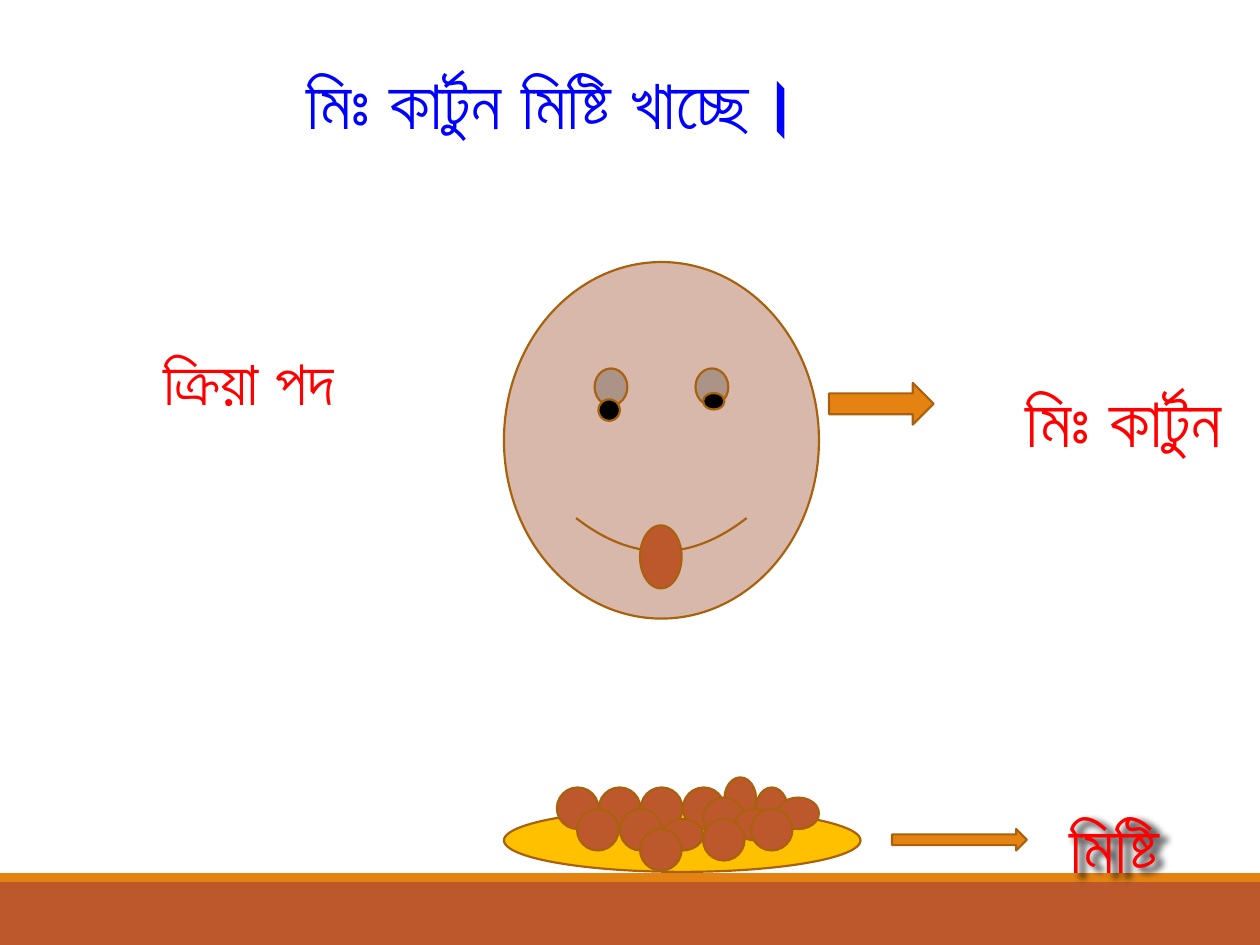
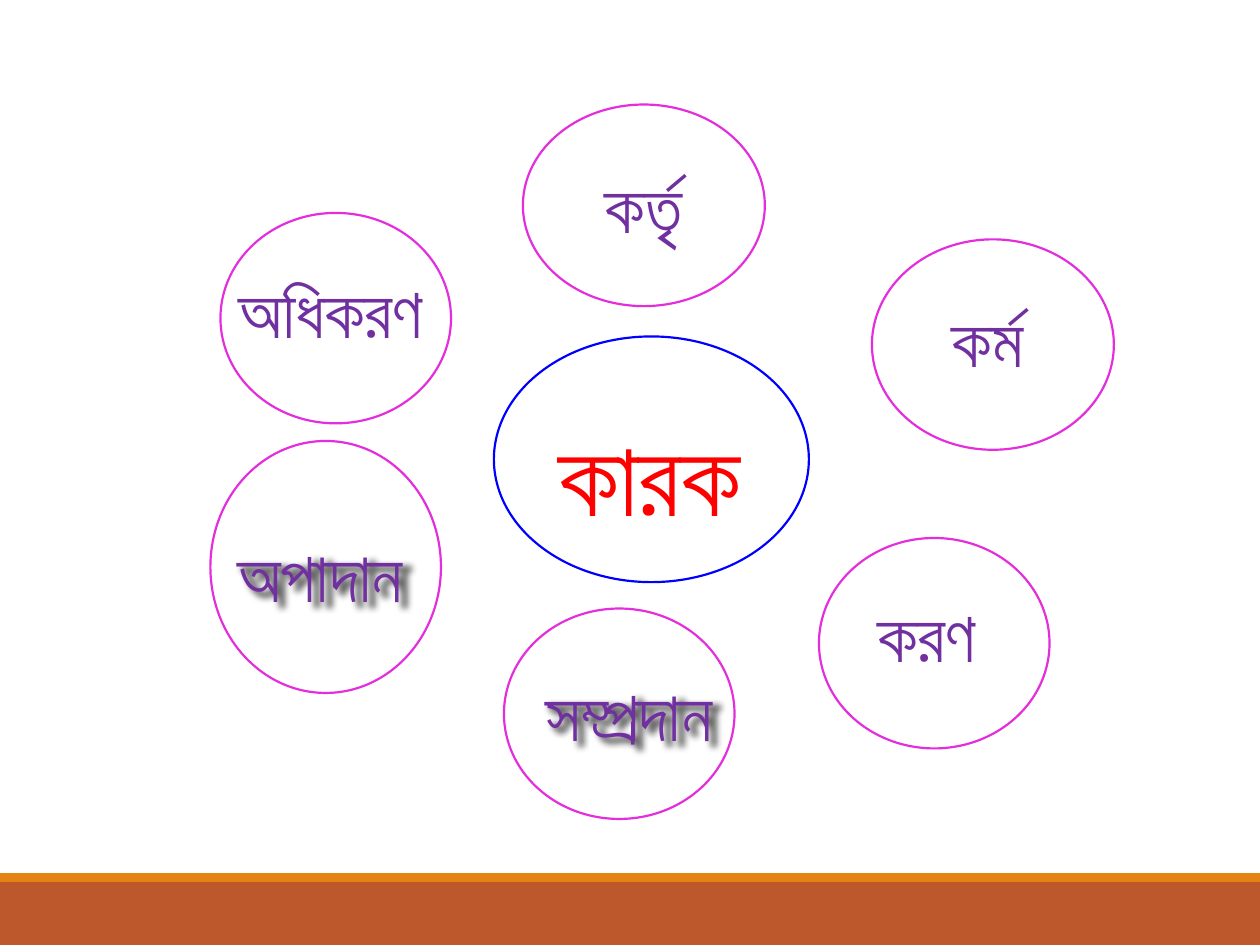
from lxml import etree
from pptx import Presentation
from pptx.dml.color import RGBColor
from pptx.enum.shapes import MSO_SHAPE as Preset
from pptx.enum.text import MSO_ANCHOR, MSO_AUTO_SIZE, PP_ALIGN
from pptx.oxml.ns import qn
from pptx.util import Inches, Pt

RUST = RGBColor(0xBD, 0x58, 0x2C)
ORANGE = RGBColor(0xE4, 0x83, 0x12)
BROWN = RGBColor(0xA9, 0x61, 0x0D)
SKIN = RGBColor(0xD7, 0xB8, 0xAB)
GOLD = RGBColor(0xFF, 0xC0, 0x00)
BLACK = RGBColor(0x00, 0x00, 0x00)
RED = RGBColor(0xFF, 0x00, 0x00)
BLUE = RGBColor(0x00, 0x00, 0xFF)
PURPLE = RGBColor(0x70, 0x30, 0xA0)
PINK = RGBColor(0xE4, 0x2E, 0xDB)

FONT = "Calibri"
LABEL_SIZE = 40

# Bands at the foot of every slide: (left, top, width, height), fill
BANDS = [((0, 7, 10, 0.5), RUST), ((0, 6.93, 10, 0.07), ORANGE)]

# Slide 1: the sentence and its parts
SENTENCE = "মিঃ কার্টুন মিষ্টি খাচ্ছে।"
SENTENCE_AT = (2.33, 0.42, 4.25, 0.77)
FACE = [
    (Preset.SMILEY_FACE, (4, 2.08, 2.5, 2.83), SKIN),
    (Preset.OVAL, (5.08, 4.17, 0.33, 0.5), RUST),
    (Preset.OVAL, (4.75, 3.17, 0.17, 0.17), BLACK),
    (Preset.OVAL, (5.58, 3.12, 0.17, 0.13), BLACK),
]
ARROWS = [(6.58, 3.04, 0.83, 0.33), (7.08, 6.58, 1.07, 0.17)]
PLATE = (4, 6.42, 2.83, 0.5)
SWEET = 0.33
BACK_ROW = [(4.42 + i / 3, 6.25, SWEET, SWEET) for i in range(4)]
HEAP = [
    (5.75, 6.17, 0.25, SWEET), (6, 6.25, 0.25, SWEET),
    (4.92, 6.42, SWEET, SWEET), (5.25, 6.5, SWEET, 0.25),
    (5.58, 6.33, SWEET, SWEET), (5.83, 6.42, SWEET, 0.25),
    (6.17, 6.33, SWEET, 0.25), (5.08, 6.58, SWEET, SWEET),
    (5.96, 6.42, SWEET, SWEET), (5.58, 6.5, SWEET, SWEET),
    (4.58, 6.42, SWEET, SWEET),
]
SUBJECT, SUBJECT_AT = "মিঃ কার্টুন", (7.92, 2.5, 2, 1.31)
OBJECT, OBJECT_AT = "মিষ্টি ", (8.17, 6.33, 1.5, 0.77)
VERB, VERB_AT = "ক্রিয়া পদ ", (0.83, 2.67, 2.42, 0.71)

# Slide 2: word, text box, ring, shadowed, wrapped
CENTRE = ("কারক", (4.27, 3.22, 1.77, 1.11), (3.92, 2.67, 2.5, 1.95))
CASES = [
    ("অধিকরণ", (1.75, 2.08, 1.75, 0.77), (1.75, 1.69, 1.83, 1.67), False, True),
    ("কর্তৃ", (4.68, 1.25, 0.85, 0.77), (4.15, 0.83, 1.92, 1.6), False, False),
    ("কর্ম", (7.42, 2.31, 0.83, 0.77), (6.92, 1.9, 1.92, 1.67), False, False),
    ("করণ", (6.84, 4.65, 1.03, 0.77), (6.5, 4.27, 1.83, 1.67), False, False),
    ("সম্প্রদান", (4.18, 5.28, 1.62, 0.77), (4, 4.83, 1.83, 1.67), True, False),
    ("অপাদান", (1.75, 4.18, 1.58, 0.65), (1.67, 3.5, 1.83, 2), True, False),
]


def inches(place):
    return [Inches(length) for length in place]


def add_figure(page, preset, place, fill=None, line=BROWN):
    figure = page.shapes.add_shape(preset, *inches(place))
    figure.shadow.inherit = False
    if fill is None:
        figure.fill.background()
    else:
        figure.fill.solid()
        figure.fill.fore_color.rgb = fill
    if line is None:
        figure.line.fill.background()
    else:
        figure.line.color.rgb = line
        figure.line.width = Pt(1.25)


def style_font(font, color, size):
    font.name, font.size, font.bold = FONT, Pt(size), True
    font.color.rgb = color


def add_label(page, words, place, color, size=LABEL_SIZE, wrap=True):
    box = page.shapes.add_textbox(*inches(place))
    box.text_frame.word_wrap = wrap
    box.text_frame.auto_size = MSO_AUTO_SIZE.SHAPE_TO_FIT_TEXT
    para = box.text_frame.paragraphs[0]
    para.text = words
    para.alignment = PP_ALIGN.CENTER
    style_font(para.font, color, size)
    return box


def add_shadow(box):
    effects = etree.SubElement(box._element.spPr, qn("a:effectLst"))
    shadow = etree.SubElement(effects, qn("a:outerShdw"), blurRad="50800",
                              dist="50800", dir="2700000", algn="tl")
    tint = etree.SubElement(shadow, qn("a:srgbClr"), val="000000")
    etree.SubElement(tint, qn("a:alpha"), val="60000")


def add_page(deck, layout):
    page = deck.slides.add_slide(deck.slide_layouts.get_by_name(layout))
    for place, fill in BANDS:
        add_figure(page, Preset.RECTANGLE, place, fill, line=None)
    return page


def build_sentence_page(deck):
    page = add_page(deck, "Title Only")
    title = page.shapes.title
    title.left, title.top, title.width, title.height = inches(SENTENCE_AT)
    frame = title.text_frame
    frame.text = SENTENCE
    frame.word_wrap = True
    frame.vertical_anchor = MSO_ANCHOR.TOP
    frame.auto_size = MSO_AUTO_SIZE.SHAPE_TO_FIT_TEXT
    frame.paragraphs[0].alignment = PP_ALIGN.LEFT
    style_font(frame.paragraphs[0].font, BLUE, LABEL_SIZE)

    # Face, plate of sweets and arrows
    for preset, place, fill in FACE:
        add_figure(page, preset, place, fill)
    add_figure(page, Preset.OVAL, PLATE, GOLD)
    for place in BACK_ROW + HEAP:
        add_figure(page, Preset.OVAL, place, RUST)
    for place in ARROWS:
        add_figure(page, Preset.RIGHT_ARROW, place, ORANGE)

    # Labels; the tall closing space sets the subject's line height
    subject = add_label(page, SUBJECT, SUBJECT_AT, RED)
    para = subject.text_frame.paragraphs[0]
    style_font(para.runs[0].font, RED, LABEL_SIZE)
    span = para.add_run()
    span.text = " "
    style_font(span.font, RED, 72)
    add_shadow(add_label(page, OBJECT, OBJECT_AT, RED))
    add_label(page, VERB, VERB_AT, RED, 36)


def build_cases_page(deck):
    page = add_page(deck, "Blank")
    word, place, ring = CENTRE
    add_figure(page, Preset.OVAL, ring, line=BLUE)
    add_label(page, word, place, RED, 60, wrap=False)
    for word, place, ring, shadowed, wrap in CASES:
        add_figure(page, Preset.OVAL, ring, line=PINK)
        box = add_label(page, word, place, PURPLE, wrap=wrap)
        if shadowed:
            add_shadow(box)


def main():
    deck = Presentation()
    deck.slide_width, deck.slide_height = Inches(10), Inches(7.5)
    build_sentence_page(deck)
    build_cases_page(deck)
    deck.save("out.pptx")


if __name__ == "__main__":
    main()
